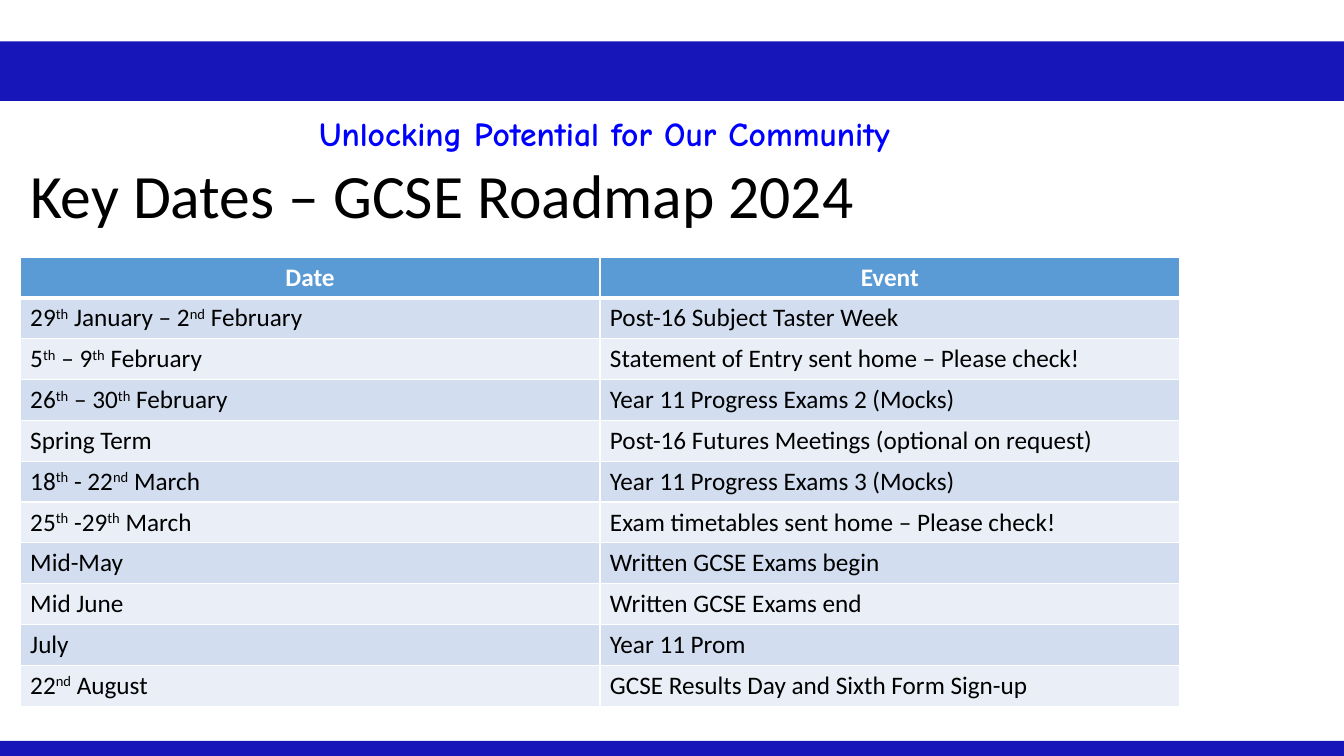
from dataclasses import dataclass

from lxml import etree
from pptx import Presentation
from pptx import util as u
from pptx.dml.color import RGBColor
from pptx.enum import shapes, text
from pptx.oxml import ns


@dataclass(frozen=True)
class Theme:
    bar: str = "1716B9"
    motto: str = "0000FF"
    header: str = "5B9BD5"
    bands: tuple[str, str] = ("D2DEEF", "EAEFF7")
    white: str = "FFFFFF"
    black: str = "000000"
    body_font: str = "Calibri"
    motto_font: str = "Comic Neue"
    title_size: int = 44
    motto_size: int = 24
    table_size: int = 18
    rule: int = 1
    header_rule: int = 3


@dataclass(frozen=True)
class Box:
    left: float
    top: float
    width: float
    height: float

    def lengths(self) -> tuple[u.Length, ...]:
        return tuple(u.Inches(v) for v in (self.left, self.top, self.width, self.height))


@dataclass(frozen=True)
class KeyDate:
    """A roadmap row; ordinal suffixes in the date stand between carets."""
    date: str
    event: str


THEME = Theme()
BARS = (Box(-0.01, 0.41, 13.35, 0.59), Box(-0.01, 7.35, 13.35, 0.22))
MOTTO = Box(2.96, 1.01, 6.07, 0.43)
TITLE = Box(0.2, 1.56, 11.5, 0.83)
ROADMAP = Box(0.2, 2.55, 11.5, 4.46)
KEY_DATES = (
    KeyDate("29^th^ January – 2^nd^ February", "Post-16 Subject Taster Week"),
    KeyDate("5^th^ – 9^th^ February", "Statement of Entry sent home – Please check!"),
    KeyDate("26^th^ – 30^th^ February", "Year 11 Progress Exams 2 (Mocks)"),
    KeyDate("Spring Term", "Post-16 Futures Meetings (optional on request)"),
    KeyDate("18^th^ - 22^nd^ March", "Year 11 Progress Exams 3 (Mocks)"),
    KeyDate("25^th^ -29^th^ March", "Exam timetables sent home – Please check!"),
    KeyDate("Mid-May", "Written GCSE Exams begin"),
    KeyDate("Mid June", "Written GCSE Exams end"),
    KeyDate("July", "Year 11 Prom"),
    KeyDate("22^nd^ August", "GCSE Results Day and Sixth Form Sign-up"),
)


def style_font(font, name: str, size: int, color: str, bold: bool = False) -> None:
    font.name, font.size, font.bold = name, u.Pt(size), bold
    font.color.rgb = RGBColor.from_string(color)


def add_rectangle(slide, box: Box, color: str):
    rectangle = slide.shapes.add_shape(shapes.MSO_SHAPE.RECTANGLE, *box.lengths())
    rectangle.shadow.inherit = False
    rectangle.fill.solid()
    rectangle.fill.fore_color.rgb = RGBColor.from_string(color)
    rectangle.line.fill.background()
    return rectangle


def add_motto(slide) -> None:
    frame = add_rectangle(slide, MOTTO, THEME.white).text_frame
    frame.word_wrap = True
    frame.vertical_anchor = text.MSO_ANCHOR.TOP
    frame.text = "Unlocking Potential for Our Community"
    motto = frame.paragraphs[0]
    motto.alignment = text.PP_ALIGN.CENTER
    motto.line_spacing = 1.15
    motto.space_after = u.Pt(10)
    style_font(motto.runs[0].font, THEME.motto_font, THEME.motto_size, THEME.motto, True)


def add_title(slide) -> None:
    frame = slide.shapes.add_textbox(*TITLE.lengths()).text_frame
    frame.word_wrap = True
    frame.vertical_anchor = text.MSO_ANCHOR.MIDDLE
    frame.text = "Key Dates – GCSE Roadmap 2024"
    title = frame.paragraphs[0]
    title.line_spacing = 0.9
    style_font(title.runs[0].font, THEME.body_font, THEME.title_size, THEME.black)


def set_borders(cell, row: int) -> None:
    """Rule all four sides, heavier along the edge below the header."""
    heavy_side = {0: "lnB", 1: "lnT"}.get(row)
    properties = cell._tc.get_or_add_tcPr()
    for side in ("lnL", "lnR", "lnT", "lnB"):
        width = THEME.header_rule if side == heavy_side else THEME.rule
        border = etree.SubElement(properties, ns.qn(f"a:{side}"), w=str(u.Pt(width)))
        fill = etree.SubElement(border, ns.qn("a:solidFill"))
        etree.SubElement(fill, ns.qn("a:srgbClr"), val=THEME.white)


def fill_cell(cell, row: int, wording: str) -> None:
    is_header = row == 0
    set_borders(cell, row)
    cell.fill.solid()
    cell.fill.fore_color.rgb = RGBColor.from_string(
        THEME.header if is_header else THEME.bands[(row - 1) % 2])
    paragraph = cell.text_frame.paragraphs[0]
    paragraph.alignment = text.PP_ALIGN.CENTER if is_header else text.PP_ALIGN.LEFT
    for index, piece in enumerate(wording.split("^")):
        run = paragraph.add_run()
        run.text = piece
        style_font(run.font, THEME.body_font, THEME.table_size,
                   THEME.white if is_header else THEME.black, is_header)
        if index % 2:
            run.font._element.set("baseline", "30000")


def add_roadmap(slide) -> None:
    rows = (KeyDate("Date", "Event"), *KEY_DATES)
    table = slide.shapes.add_table(len(rows), 2, *ROADMAP.lengths()).table
    for row, entry in enumerate(rows):
        for column, wording in enumerate((entry.date, entry.event)):
            fill_cell(table.cell(row, column), row, wording)


def main() -> None:
    presentation = Presentation()
    presentation.slide_width = u.Inches(13.33)
    presentation.slide_height = u.Inches(7.5)
    slide = presentation.slides.add_slide(presentation.slide_layouts[6])
    for bar in BARS:
        add_rectangle(slide, bar, THEME.bar)
    add_motto(slide)
    add_title(slide)
    add_roadmap(slide)
    presentation.save("out.pptx")


if __name__ == "__main__":
    main()
